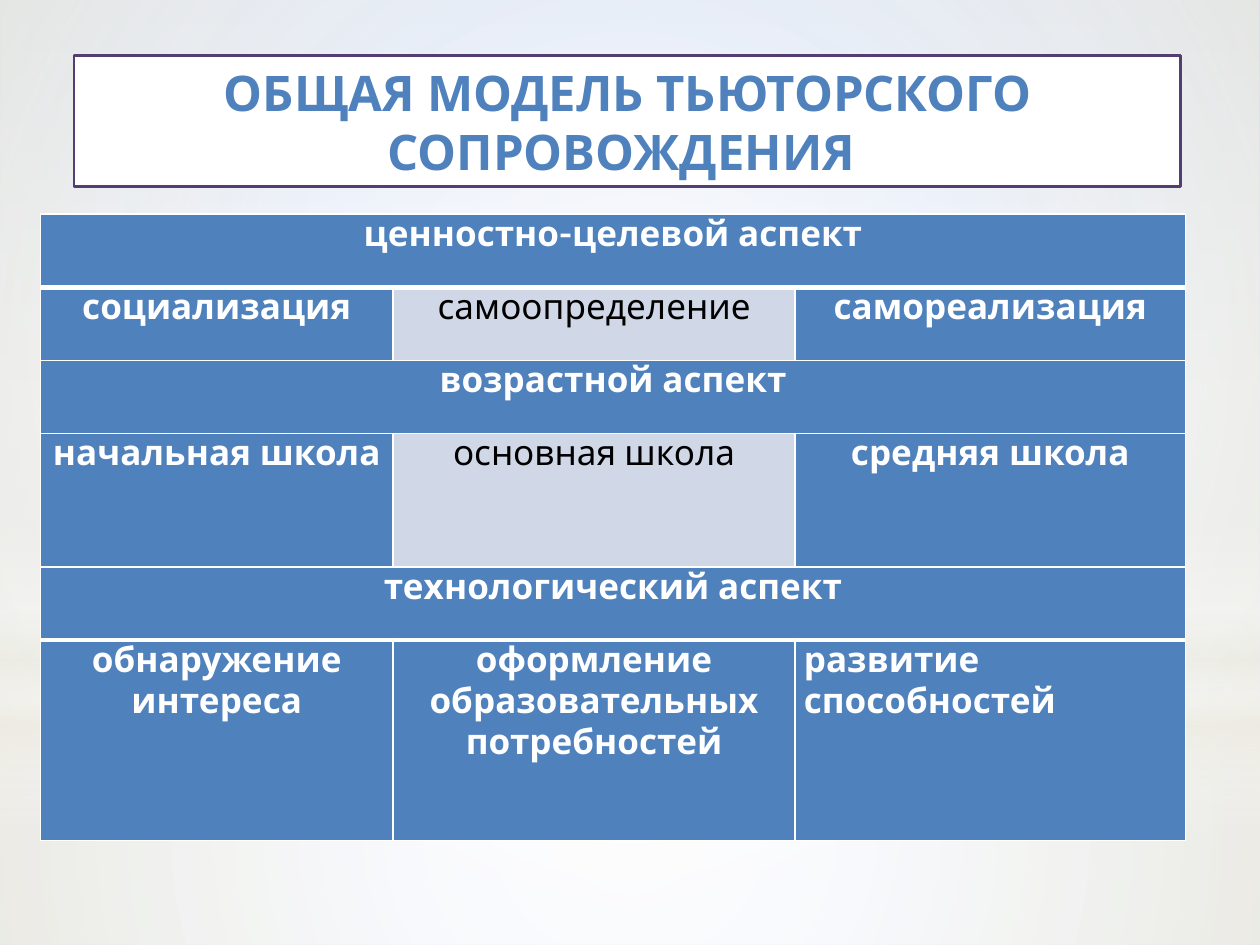
"""Build the slide with the general model of tutor support."""
from pptx import Presentation
from pptx.dml.color import RGBColor
from pptx.enum.shapes import MSO_SHAPE
from pptx.enum.text import MSO_ANCHOR, MSO_AUTO_SIZE, PP_ALIGN
from pptx.oxml import parse_xml
from pptx.oxml.ns import nsdecls, qn
from pptx.util import Inches, Pt

WHITE = RGBColor(0xFF, 0xFF, 0xFF)
BLACK = RGBColor(0x00, 0x00, 0x00)
BLUE = RGBColor(0x4F, 0x81, 0xBD)
PALE_BLUE = RGBColor(0xD0, 0xD8, 0xE8)
PURPLE = RGBColor(0x54, 0x3D, 0x70)
CREAM = RGBColor(0xEE, 0xEC, 0xE1)
SKY_TOP = RGBColor(0xC2, 0xD1, 0xED)
SKY_BOTTOM = RGBColor(0xE1, 0xE8, 0xF5)
FONT = "Karla"

RADIAL = '<a:path path="circle"><a:fillToRect l="50000" t="50000" r="50000" b="50000"/></a:path>'
VERTICAL = '<a:lin ang="5400000" scaled="0"/>'


def write_text(frame, text, align, **font_values):
    """Write one formatted paragraph into a text frame."""
    para = frame.paragraphs[0]
    para.alignment = align
    span = para.add_run()
    span.text = text
    color = font_values.pop("color")
    for name, value in {"name": FONT, **font_values}.items():
        setattr(span.font, name, value)
    span.font.color.rgb = color


deck = Presentation()
deck.slide_width, deck.slide_height = Inches(10), Inches(7.5)
page = deck.slides.add_slide(deck.slide_layouts[5])

sky = page.background.fill
sky.gradient()
sky.gradient_angle = 270
for stop, position, color in zip(sky.gradient_stops, (0, 0.43), (SKY_TOP, SKY_BOTTOM)):
    stop.position = position
    stop.color.rgb = color

GLOWS = [
    (MSO_SHAPE.RECTANGLE, 5.58, 1.92, RADIAL,
     [(0, WHITE, 91), (37, WHITE, 76), (100, CREAM, 79)]),
    (MSO_SHAPE.RECTANGLE, 0, 5.58, RADIAL,
     [(0, WHITE, 89), (48, WHITE, 62), (100, CREAM, 79)]),
    (MSO_SHAPE.RECTANGLE, 4.12, 2.5, VERTICAL,
     [(0, WHITE, 0), (29, WHITE, 30), (45, CREAM, 40),
      (55, WHITE, 26), (65, CREAM, 60), (100, WHITE, 0)]),
    (MSO_SHAPE.OVAL, 1.75, 5.58, RADIAL, [(0, WHITE, 100), (56, WHITE, 0)]),
]
for kind, top, height, direction, stops in GLOWS:
    glow = page.shapes.add_shape(kind, 0, Inches(top), deck.slide_width, Inches(height))
    glow.shadow.inherit = False
    glow.line.fill.background()
    glow.fill.gradient()
    stop_xml = "".join(
        f'<a:gs pos="{position * 1000}"><a:srgbClr val="{color}">'
        f'<a:alpha val="{opacity * 1000}"/></a:srgbClr></a:gs>'
        for position, color, opacity in stops)
    gradient = parse_xml(f'<a:gradFill {nsdecls("a")} rotWithShape="1">'
                         f'<a:gsLst>{stop_xml}</a:gsLst>{direction}</a:gradFill>')
    properties = glow.element.spPr
    properties.replace(properties.find(qn("a:gradFill")), gradient)

ROWS = [
    ["ценностно-целевой аспект"],
    ["социализация", "самоопределение", "самореализация"],
    ["возрастной аспект"],
    ["начальная школа", "основная школа", "средняя школа"],
    ["технологический аспект"],
    ["обнаружение интереса", "оформление образовательных потребностей",
     "развитие способностей"],
]
COLUMN_WIDTHS = [2.8, 3.19, 3.1]
ROW_HEIGHTS = [0.58, 0.58, 0.58, 1.06, 0.58, 1.59]
THICK_BELOW = (0, 4)
CELL_FORMAT = {"margin_left": Inches(0.07), "margin_right": Inches(0.07),
               "margin_top": 0, "margin_bottom": 0}

table = page.shapes.add_table(
    len(ROWS), len(COLUMN_WIDTHS), Inches(0.32), Inches(1.7),
    Inches(sum(COLUMN_WIDTHS)), Inches(sum(ROW_HEIGHTS))).table
for column, width in zip(table.columns, COLUMN_WIDTHS):
    column.width = Inches(width)
for row, height in zip(table.rows, ROW_HEIGHTS):
    row.height = Inches(height)

for row_index, texts in enumerate(ROWS):
    if len(texts) == 1:
        table.cell(row_index, 0).merge(table.cell(row_index, len(COLUMN_WIDTHS) - 1))
    for column_index in range(len(COLUMN_WIDTHS)):
        cell = table.cell(row_index, column_index)
        for name, value in CELL_FORMAT.items():
            setattr(cell, name, value)
        pale = row_index in (1, 3) and column_index == 1
        cell.fill.solid()
        cell.fill.fore_color.rgb = PALE_BLUE if pale else BLUE
        edges = {"L": 1, "R": 1,
                 "T": 3 if row_index - 1 in THICK_BELOW else 1,
                 "B": 3 if row_index in THICK_BELOW else 1}
        for position, (side, width) in enumerate(edges.items()):
            border = parse_xml(
                f'<a:ln{side} {nsdecls("a")} w="{Pt(width)}"><a:solidFill>'
                f'<a:srgbClr val="{WHITE}"/></a:solidFill></a:ln{side}>')
            cell._tc.get_or_add_tcPr().insert(position, border)
        if column_index < len(texts):
            last = (row_index, column_index) == (len(ROWS) - 1, len(COLUMN_WIDTHS) - 1)
            write_text(cell.text_frame, texts[column_index],
                       PP_ALIGN.JUSTIFY if last else PP_ALIGN.CENTER,
                       size=Pt(20), bold=not pale, color=BLACK if pale else WHITE)

title = page.shapes.title
title.element.getparent().append(title.element)
TITLE_PLACE = {"left": 0.59, "top": 0.44, "width": 8.78, "height": 1.04}
for name, value in TITLE_PLACE.items():
    setattr(title, name, Inches(value))
title.fill.solid()
title.fill.fore_color.rgb = WHITE
title.line.color.rgb = PURPLE
title.line.width = Pt(1.25)
TITLE_FRAME = {"word_wrap": True, "auto_size": MSO_AUTO_SIZE.SHAPE_TO_FIT_TEXT,
               "vertical_anchor": MSO_ANCHOR.MIDDLE}
for name, value in TITLE_FRAME.items():
    setattr(title.text_frame, name, value)
write_text(title.text_frame, "ОБЩАЯ МОДЕЛЬ ТЬЮТОРСКОГО СОПРОВОЖДЕНИЯ ",
           PP_ALIGN.CENTER, size=Pt(28), bold=True, color=BLUE)

deck.save("out.pptx")
